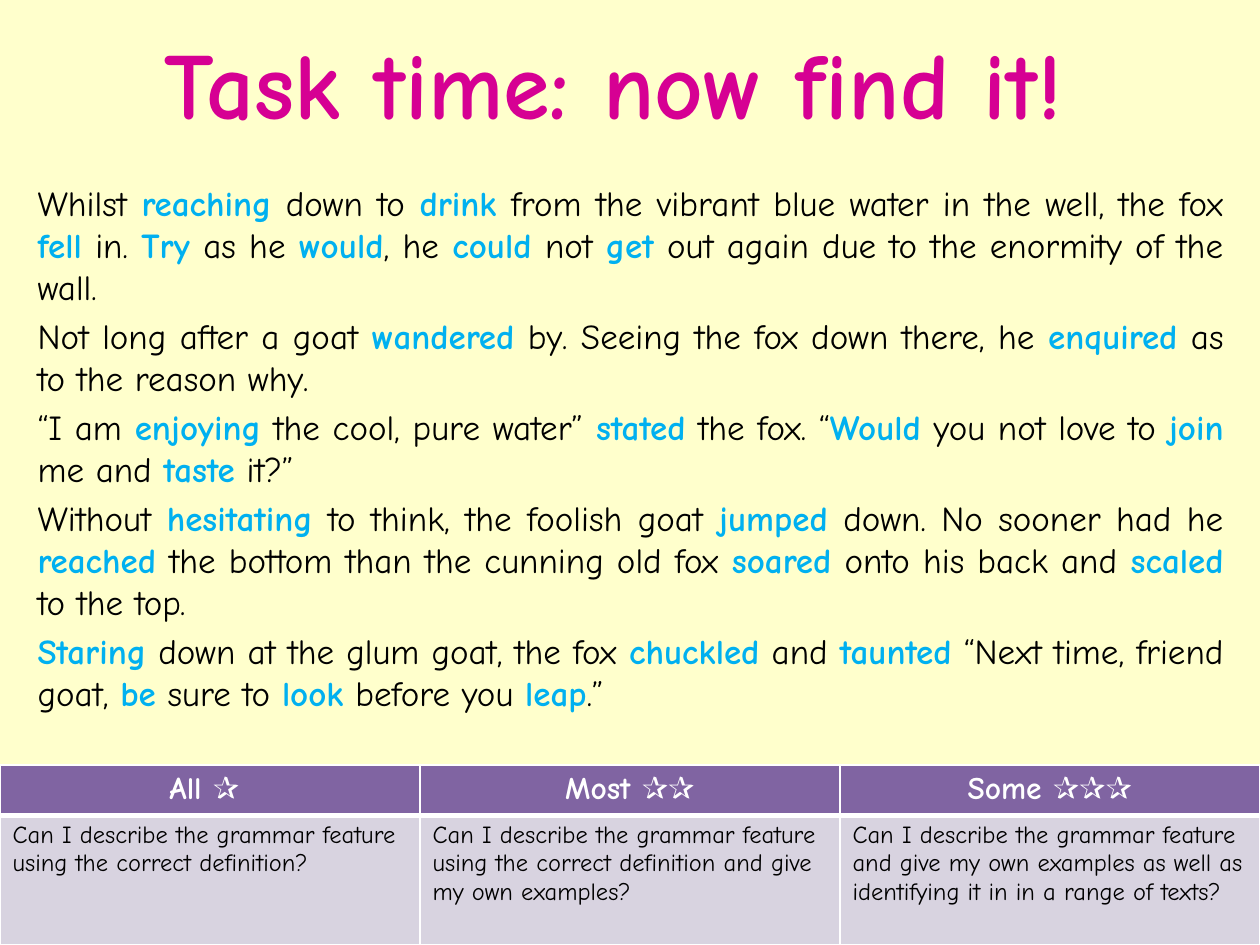
from dataclasses import dataclass

from lxml import etree
from pptx import Presentation, util as u
from pptx.dml.color import RGBColor
from pptx.enum import text
from pptx.oxml.ns import qn

TITLE = "Task time: now find it! "

# Verbs to highlight stand between asterisks.
STORY = [
    "Whilst *reaching* down to *drink* from the vibrant blue water in the well, the fox *fell* in. "
    "*Try* as he *would*, he *could* not *get* out again due to the enormity of the wall.",
    "Not long after a goat *wandered* by. Seeing the fox down there, he *enquired* as to the reason why. ",
    "“I am *enjoying* the cool, pure water” *stated* the fox. “*Would* you not love to *join* me and *taste* it?”",
    "Without *hesitating* to think, the foolish goat *jumped* down. No sooner had he *reached* the bottom "
    "than the cunning old fox *soared* onto his back and *scaled* to the top. ",
    "*Staring* down at the glum goat, the fox *chuckled* and *taunted* “Next time, friend goat, "
    "*be* sure to *look* before you *leap*.”",
]

GOALS = [
    ("All ✰ ", "Can I describe the grammar feature using the correct definition?"),
    ("Most ✰✰", "Can I describe the grammar feature using the correct definition and give my own examples?"),
    ("Some ✰✰✰", "Can I describe the grammar feature and give my own examples as well as "
     "identifying it in in a range of texts?"),
]


@dataclass(frozen=True)
class Theme:
    font: str = "Comic Neue"
    background: str = "FFFFCC"
    title: str = "D60093"
    ink: str = "000000"
    verb: str = "00B0F0"
    header: str = "8064A2"
    goal: str = "D8D3E0"
    white: str = "FFFFFF"
    title_size: int = 54
    story_size: int = 20
    header_size: int = 18
    goal_size: int = 14


THEME = Theme()
WIDTH, HEIGHT = u.Inches(10), u.Inches(7.5)
TITLE_BOX = (0, 0.02, 10, 1.25)
STORY_BOX = (0.2, 1.39, 9.61, 4.95)
TABLE_TOP = 6.07
ROW_HEIGHTS = (0.37, 1.03)


def style(font, size, color, bold=None):
    font.name, font.size, font.bold = THEME.font, u.Pt(size), bold
    font.color.rgb = RGBColor.from_string(color)


def add_text_frame(slide, box):
    frame = slide.shapes.add_textbox(*map(u.Inches, box)).text_frame
    frame.word_wrap = True
    return frame


def add_title(slide):
    frame = add_text_frame(slide, TITLE_BOX)
    frame.vertical_anchor = text.MSO_ANCHOR.MIDDLE
    heading = frame.paragraphs[0]
    heading.text = TITLE
    heading.alignment = text.PP_ALIGN.CENTER
    style(heading.font, THEME.title_size, THEME.title, True)


def add_story(slide):
    frame = add_text_frame(slide, STORY_BOX)
    for i, passage in enumerate(STORY):
        paragraph = frame.add_paragraph() if i else frame.paragraphs[0]
        paragraph.alignment = text.PP_ALIGN.JUSTIFY
        paragraph.space_before = u.Pt(0.2 * THEME.story_size)
        for j, part in enumerate(passage.split("*")):
            if part:
                run = paragraph.add_run()
                run.text = part
                is_verb = j % 2 == 1
                style(run.font, THEME.story_size, THEME.verb if is_verb else THEME.ink, is_verb)


def add_borders(cell, bottom):
    """Draw white cell borders, 1 pt except for the bottom one."""
    properties = cell._tc.get_or_add_tcPr()
    for i, (side, points) in enumerate((("L", 1), ("R", 1), ("T", 1), ("B", bottom))):
        line = etree.Element(qn(f"a:ln{side}"), w=str(u.Pt(points)))
        fill = etree.SubElement(line, qn("a:solidFill"))
        etree.SubElement(fill, qn("a:srgbClr"), val=THEME.white)
        properties.insert(i, line)


def add_goals(slide):
    looks = [
        (THEME.header, THEME.header_size, THEME.white, True, text.PP_ALIGN.CENTER, 3),
        (THEME.goal, THEME.goal_size, THEME.ink, False, text.PP_ALIGN.LEFT, 1),
    ]
    table = slide.shapes.add_table(len(looks), len(GOALS), 0, u.Inches(TABLE_TOP),
                                   WIDTH, u.Inches(sum(ROW_HEIGHTS))).table
    for row, height in zip(table.rows, ROW_HEIGHTS):
        row.height = u.Inches(height)
    for c, goal in enumerate(GOALS):
        for r, (fill, size, color, bold, alignment, bottom) in enumerate(looks):
            cell = table.cell(r, c)
            cell.fill.solid()
            cell.fill.fore_color.rgb = RGBColor.from_string(fill)
            add_borders(cell, bottom)
            cell.text = goal[r]
            paragraph = cell.text_frame.paragraphs[0]
            paragraph.alignment = alignment
            style(paragraph.font, size, color, bold)


def main():
    deck = Presentation()
    deck.slide_width, deck.slide_height = WIDTH, HEIGHT
    slide = deck.slides.add_slide(deck.slide_layouts[6])
    slide.background.fill.solid()
    slide.background.fill.fore_color.rgb = RGBColor.from_string(THEME.background)
    add_title(slide)
    add_goals(slide)
    add_story(slide)
    deck.save("out.pptx")


if __name__ == "__main__":
    main()
